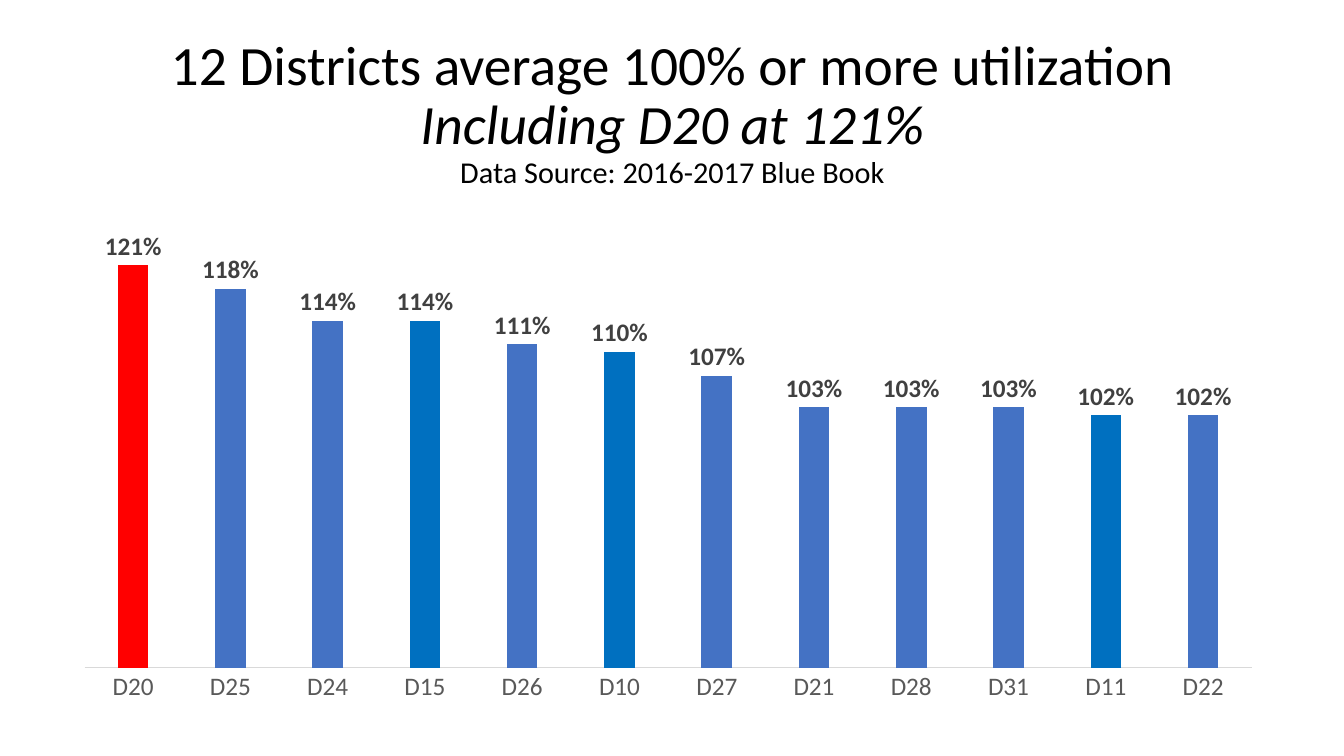
from pptx import Presentation
from pptx import util as u
from pptx.chart.data import CategoryChartData
from pptx.dml.color import RGBColor
from pptx.enum import chart as ch, text
from pptx.oxml import parse_xml
from pptx.oxml.ns import nsdecls

FONT = "Calibri"
RATES = {"D20": 1.21, "D25": 1.18, "D24": 1.14, "D15": 1.14, "D26": 1.11, "D10": 1.1,
         "D27": 1.07, "D21": 1.03, "D28": 1.03, "D31": 1.03, "D11": 1.02, "D22": 1.02}
MARKS = {"D20": "FF0000", "D15": "0070C0", "D10": "0070C0", "D11": "0070C0"}


def paint(fill, color):
    """Make a fill solid in a hex color."""
    fill.solid()
    fill.fore_color.rgb = RGBColor.from_string(color)


def style(font, size, color, bold=False, italic=False):
    """Set the looks of a font."""
    font.name, font.size = FONT, u.Pt(size)
    font.bold, font.italic = bold, italic
    font.color.rgb = RGBColor.from_string(color)


def add_title(slide, box):
    """Place the three-line title in its box."""
    frame = slide.shapes.add_textbox(*map(u.Inches, box)).text_frame
    frame.word_wrap = True
    frame.vertical_anchor = text.MSO_ANCHOR.MIDDLE
    para = frame.paragraphs[0]
    para.text = ("12 Districts average 100% or more utilization\v"
                 "Including D20 at 121%\vData Source: 2016-2017 Blue Book")
    para.alignment = text.PP_ALIGN.CENTER
    para.line_spacing = 0.9
    looks = [(39.6, False), (39.6, True), (21.6, False)]
    for run, (size, italic) in zip(para.runs, looks):
        style(run.font, size, "000000", italic=italic)


def set_plot(chart, x, y, w, h):
    """Fix the inner plot area as fractions of the chart."""
    area = chart.plots[0]._element.getparent()
    for old in area.findall("{*}layout"):
        area.remove(old)
    sizes = "".join(f'<c:{key} val="{val}"/>' for key, val in zip("xywh", (x, y, w, h)))
    area.insert(0, parse_xml(
        f'<c:layout {nsdecls("c")}><c:manualLayout><c:layoutTarget val="inner"/>'
        f'<c:xMode val="edge"/><c:yMode val="edge"/>{sizes}'
        '</c:manualLayout></c:layout>'))


def add_bars(slide, box):
    """Place the column chart of district rates in its box."""
    data = CategoryChartData(number_format="0%")
    data.categories = list(RATES)
    data.add_series("Series 1", list(RATES.values()))
    chart = slide.shapes.add_chart(
        ch.XL_CHART_TYPE.COLUMN_CLUSTERED, *map(u.Inches, box), data).chart
    chart.has_legend = chart.has_title = False
    style(chart.font, 10, "000000")
    set_plot(chart, 0.026, 0, 0.974, 0.908)

    rate = chart.value_axis
    rate.minimum_scale, rate.maximum_scale = 0.7, 1.3
    rate.has_major_gridlines = rate.visible = False
    axis = chart.category_axis
    axis.major_tick_mark = ch.XL_TICK_MARK.NONE
    style(axis.tick_labels.font, 18, "595959")
    paint(axis.format.line.fill, "D9D9D9")
    axis.format.line.width = u.Pt(0.75)

    plot = chart.plots[0]
    plot.gap_width, plot.overlap = 219, -27
    plot.vary_by_categories = False
    bars = plot.series[0]
    paint(bars.format.fill, "4472C4")
    for i, name in enumerate(RATES):
        if name in MARKS:
            paint(bars.points[i].format.fill, MARKS[name])
    labels = bars.data_labels
    labels.show_value = True
    labels.position = ch.XL_LABEL_POSITION.OUTSIDE_END
    labels.number_format, labels.number_format_is_linked = "0%", False
    style(labels.font, 18, "404040", bold=True)


def main():
    """Build the slide and save it."""
    deck = Presentation()
    deck.slide_width, deck.slide_height = u.Inches(13.33), u.Inches(7.5)
    slide = deck.slides.add_slide(deck.slide_layouts[6])
    add_title(slide, (0.92, 0.4, 11.5, 1.45))
    add_bars(slide, (0.53, 1.93, 11.89, 5.17))
    deck.save("out.pptx")


if __name__ == "__main__":
    main()
